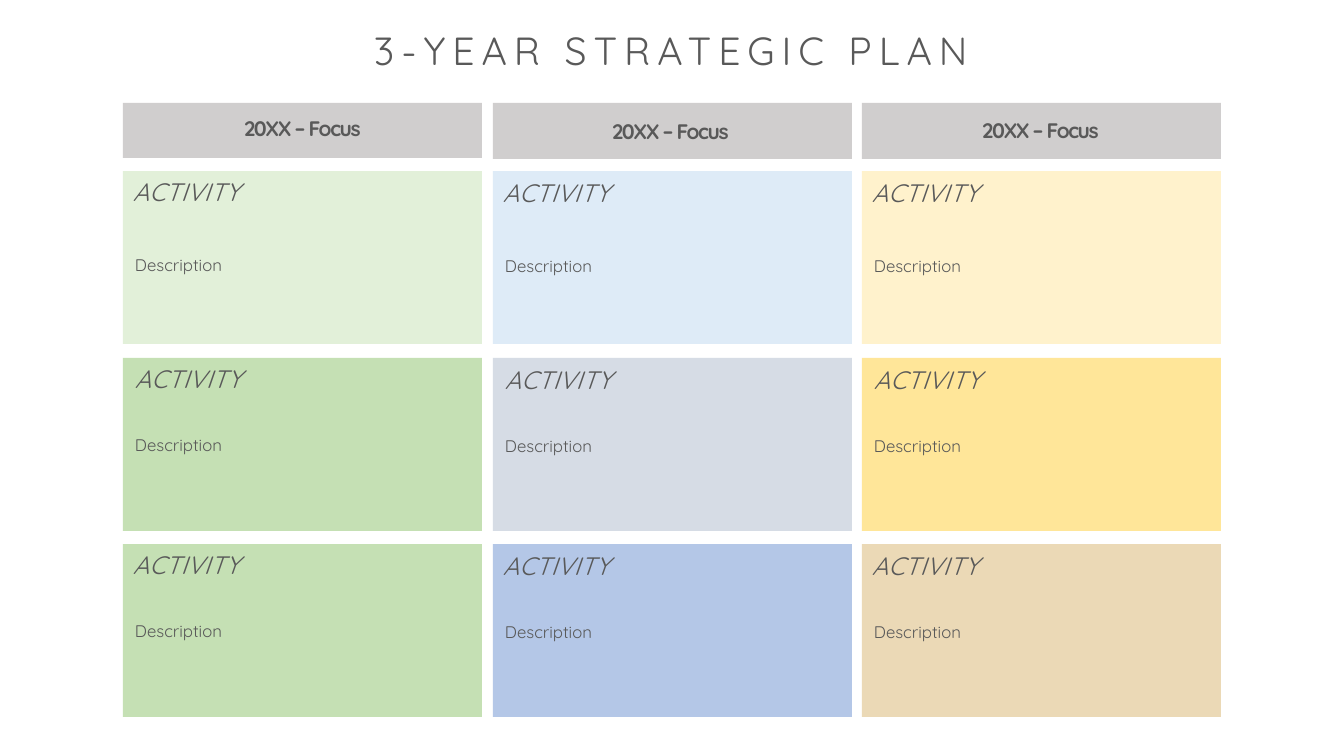
"""Builds a three-year strategic plan slide: one column per year, three activities each."""
from dataclasses import dataclass

from pptx import Presentation
from pptx.dml.color import RGBColor
from pptx.enum.shapes import MSO_SHAPE as Shape
from pptx.enum.text import MSO_ANCHOR as Anchor, MSO_AUTO_SIZE as AutoSize, PP_ALIGN as Align
from pptx.util import Emu, Pt

TITLE = "3-YEAR STRATEGIC PLAN"
YEARS = [
    {"focus": "20XX – Focus", "left": 123, "header": 55, "focus_at": (123, 111), "drop": 0,
     "colours": ("E2F0D9", "C5E0B4", "C5E0B4")},
    {"focus": "20XX – Focus", "left": 493, "header": 56, "focus_at": (491, 114), "drop": 1,
     "colours": ("DEEBF7", "D6DCE5", "B4C7E7")},
    {"focus": "20XX – Focus", "left": 862, "header": 56, "focus_at": (861, 113), "drop": 1,
     "colours": ("FFF2CC", "FFE699", "EBD9B6")},
]
ROWS = [
    {"top": 171, "activity": "ACTIVITY", "indent": 0, "description": "Description", "gap": 79},
    {"top": 358, "activity": "ACTIVITY", "indent": 2, "description": "Description", "gap": 72},
    {"top": 544, "activity": "ACTIVITY", "indent": 0, "description": "Description", "gap": 72},
]
SLIDE_WIDTH, SLIDE_HEIGHT = 1344, 756
CARD_WIDTH, CARD_HEIGHT = 359, 173
HEADER_TOP = 103
DESCRIPTION_INDENT = 2


@dataclass(frozen=True)
class Theme:
    font: str = "Quicksand"
    ink: str = "595959"
    header: str = "D0CECE"
    title_size: int = 28
    focus_size: int = 15
    activity_size: int = 18
    description_size: int = 12


THEME = Theme()


def px(length):
    return Emu(round(length * 914400 / 100.8))


def place(shape, left, top, width, height):
    shape.left, shape.top, shape.width, shape.height = map(px, (left, top, width, height))


def write(box, text, size, align=Align.LEFT, bold=False, italic=False, spacing=0):
    frame = box.text_frame
    frame.word_wrap = True
    frame.auto_size = AutoSize.SHAPE_TO_FIT_TEXT
    frame.vertical_anchor = Anchor.TOP
    para = frame.paragraphs[0]
    para.alignment = align
    span = para.add_run()
    span.text = text
    if spacing:
        span._r.get_or_add_rPr().set("spc", str(spacing * 100))
    font = para.font
    font.name, font.size, font.bold, font.italic = THEME.font, Pt(size), bold, italic
    font.color.rgb = RGBColor.from_string(THEME.ink)


def add_label(page, left, top, width, height, text, size, **style):
    box = page.shapes.add_textbox(*map(px, (left, top, width, height)))
    write(box, text, size, **style)


def add_block(page, left, top, width, height, colour):
    block = page.shapes.add_shape(Shape.RECTANGLE, *map(px, (left, top, width, height)))
    block.shadow.inherit = False
    block.fill.solid()
    block.fill.fore_color.rgb = RGBColor.from_string(colour)
    block.line.fill.background()


def add_year(page, year):
    left, drop = year["left"], year["drop"]
    add_block(page, left, HEADER_TOP, CARD_WIDTH, year["header"], THEME.header)
    add_label(page, *year["focus_at"], CARD_WIDTH, 35, year["focus"], THEME.focus_size,
              align=Align.CENTER, bold=True, spacing=-1)
    for row, colour in zip(ROWS, year["colours"]):
        top = row["top"]
        add_block(page, left, top, CARD_WIDTH, CARD_HEIGHT, colour)
        add_label(page, left + row["indent"], top + drop, 309, 40,
                  row["activity"], THEME.activity_size, italic=True)
        add_label(page, left + DESCRIPTION_INDENT, top + row["gap"] + drop, 358, 30,
                  row["description"], THEME.description_size)


def main():
    deck = Presentation()
    deck.slide_width, deck.slide_height = px(SLIDE_WIDTH), px(SLIDE_HEIGHT)
    page = deck.slides.add_slide(deck.slide_layouts[5])
    title = page.shapes.title
    place(title, 18, 21, 1306, 57)
    write(title, TITLE, THEME.title_size, align=Align.CENTER, spacing=5)
    for year in YEARS:
        add_year(page, year)
    deck.save("out.pptx")


if __name__ == "__main__":
    main()
